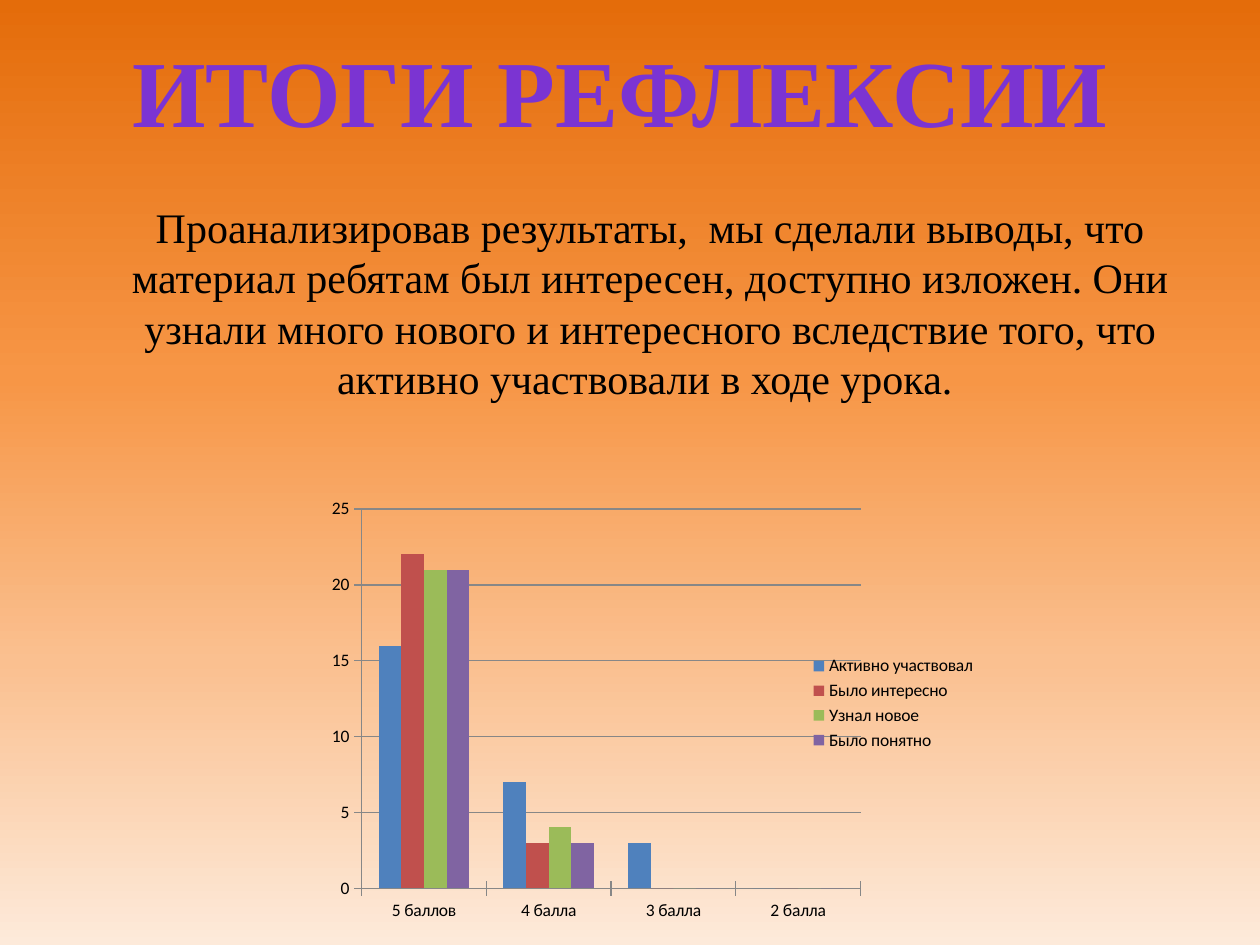
from dataclasses import dataclass

from lxml.etree import SubElement
from pptx import Presentation
from pptx.chart.data import CategoryChartData
from pptx.dml.color import RGBColor
from pptx.enum.chart import XL_CHART_TYPE as ChartType, XL_LEGEND_POSITION as LegendPos
from pptx.enum.chart import XL_TICK_MARK as Tick
from pptx.enum.text import MSO_AUTO_SIZE as AutoSize, PP_ALIGN as Align
from pptx.oxml import parse_xml
from pptx.oxml.ns import nsdecls, qn
from pptx.util import Inches, Pt

W, H = Inches(10), Inches(7.5)
SERIF, SANS = "Times New Roman", "Calibri"
BLACK = RGBColor(0x00, 0x00, 0x00)
GREY = RGBColor(0x87, 0x87, 0x87)
OUTLINE = RGBColor(0x5E, 0x45, 0x7C)
ORANGE = RGBColor(0xE4, 0x6C, 0x0A)
AMBER = RGBColor(0xF7, 0x96, 0x46)
PEACH = RGBColor(0xFA, 0xC0, 0x90)
CREAM = RGBColor(0xFD, 0xEA, 0xDA)
DARK_VIOLET = RGBColor(0x3D, 0x1B, 0x67)
VIOLET = RGBColor(0x7B, 0x34, 0xD2)
MID_VIOLET = RGBColor(0x73, 0x30, 0xC4)
BLUE = RGBColor(0x4F, 0x81, 0xBD)
RED = RGBColor(0xC0, 0x50, 0x4D)
GREEN = RGBColor(0x9B, 0xBB, 0x59)
PURPLE = RGBColor(0x80, 0x64, 0xA2)

SUNSET = [(0, ORANGE), (40, AMBER), (70, PEACH), (100, CREAM)]
VIOLETS = [(0, DARK_VIOLET), (43, VIOLET), (48, MID_VIOLET), (100, DARK_VIOLET)]


@dataclass
class Box:
    """Place and size as percentages of the slide."""
    left: float
    top: float
    width: float
    height: float

    def emu(self) -> list[int]:
        return [int(W * self.left / 100), int(H * self.top / 100),
                int(W * self.width / 100), int(H * self.height / 100)]


@dataclass
class Series:
    name: str
    values: list[int]
    color: RGBColor


@dataclass
class TextBlock:
    box: Box
    text: str
    size: int
    bold: bool = False
    wrap: bool = True


TITLE = TextBlock(Box(9.1, 2.8, 80.2, 13.47), "ИТОГИ РЕФЛЕКСИИ", 54, bold=True, wrap=False)
BODY = TextBlock(
    Box(7.5, 20.67, 88.2, 22.93),
    "Проанализировав результаты,  мы сделали выводы, что материал ребятам был "
    "интересен, доступно изложен. Они узнали много нового и интересного "
    "вследствие того, что активно участвовали в ходе урока. ", 24)
CHART_BOX = Box(18.5, 51.07, 60, 46.67)
SCORES = ["5 баллов", "4 балла", "3 балла", "2 балла"]
SERIES = [
    Series("Активно участвовал", [16, 7, 3, 0], BLUE),
    Series("Было интересно", [22, 3, 0, 0], RED),
    Series("Узнал новое", [21, 4, 0, 0], GREEN),
    Series("Было понятно", [21, 3, 0, 0], PURPLE),
]


def set_gradient(fill, root, stops: list[tuple[int, RGBColor]]) -> None:
    """Give a fill, found under root, a top-to-bottom gradient."""
    fill.gradient()
    fill.gradient_angle = 270
    gs_list = root.find(".//" + qn("a:gsLst"))
    for old in list(gs_list):
        gs_list.remove(old)
    for pos, color in stops:
        gs = SubElement(gs_list, qn("a:gs"), pos=str(pos * 1000))
        SubElement(gs, qn("a:srgbClr"), val=str(color))


def add_text(slide, block: TextBlock):
    sp = slide.shapes.add_textbox(*block.box.emu())
    tf = sp.text_frame
    tf.word_wrap = block.wrap
    tf.auto_size = AutoSize.SHAPE_TO_FIT_TEXT
    p = tf.paragraphs[0]
    p.text = block.text
    p.alignment = Align.CENTER
    p.font.name, p.font.size, p.font.bold = SERIF, Pt(block.size), block.bold
    return sp


def add_title(slide) -> None:
    sp = add_text(slide, TITLE)
    r = sp.text_frame.paragraphs[0].runs[0]
    set_gradient(r.font.fill, sp.element, VIOLETS)
    r_pr = sp.element.find(".//" + qn("a:rPr"))
    r_pr.insert(0, parse_xml(
        f'<a:ln {nsdecls("a")} w="{Pt(0.71)}"><a:solidFill>'
        f'<a:srgbClr val="{OUTLINE}"/></a:solidFill></a:ln>'))


def add_score_chart(slide) -> None:
    data = CategoryChartData()
    data.categories = SCORES
    for s in SERIES:
        data.add_series(s.name, s.values)
    chart = slide.shapes.add_chart(
        ChartType.COLUMN_CLUSTERED, *CHART_BOX.emu(), data).chart
    chart.has_title = False
    chart.font.name, chart.font.size = SANS, Pt(10)
    chart.font.color.rgb = BLACK

    # Columns
    plot = chart.plots[0]
    plot.vary_by_categories = False
    plot.gap_width, plot.overlap = 150, 0
    for s, drawn in zip(SERIES, plot.series):
        drawn.format.fill.solid()
        drawn.format.fill.fore_color.rgb = s.color

    # Axes and gridlines
    values = chart.value_axis
    values.minimum_scale, values.maximum_scale, values.major_unit = 0, 25, 5
    values.has_major_gridlines = True
    for axis in (chart.category_axis, values):
        axis.major_tick_mark = Tick.CROSS
    for part in (chart.category_axis, values, values.major_gridlines):
        part.format.line.color.rgb = GREY
        part.format.line.width = Pt(0.75)

    # Legend, and a fixed inner plot area that runs under it
    chart.has_legend = True
    chart.legend.position = LegendPos.RIGHT
    chart.legend.include_in_layout = False
    area = chart.element.find(".//" + qn("c:plotArea"))
    for old in area.findall(qn("c:layout")):
        area.remove(old)
    layout = parse_xml(f'<c:layout {nsdecls("c")}><c:manualLayout/></c:layout>')
    for tag, val in [("layoutTarget", "inner"), ("xMode", "edge"), ("yMode", "edge"),
                     ("x", 0.17), ("y", 0.06), ("w", 0.66), ("h", 0.86)]:
        SubElement(layout[0], qn(f"c:{tag}"), val=str(val))
    area.insert(0, layout)


def main() -> None:
    prs = Presentation()
    prs.slide_width, prs.slide_height = W, H
    slide = prs.slides.add_slide(prs.slide_layouts[6])
    set_gradient(slide.background.fill, slide.element, SUNSET)
    add_score_chart(slide)
    add_title(slide)
    body = add_text(slide, BODY)
    body.text_frame.paragraphs[0].font.color.rgb = BLACK
    prs.save("out.pptx")


if __name__ == "__main__":
    main()
